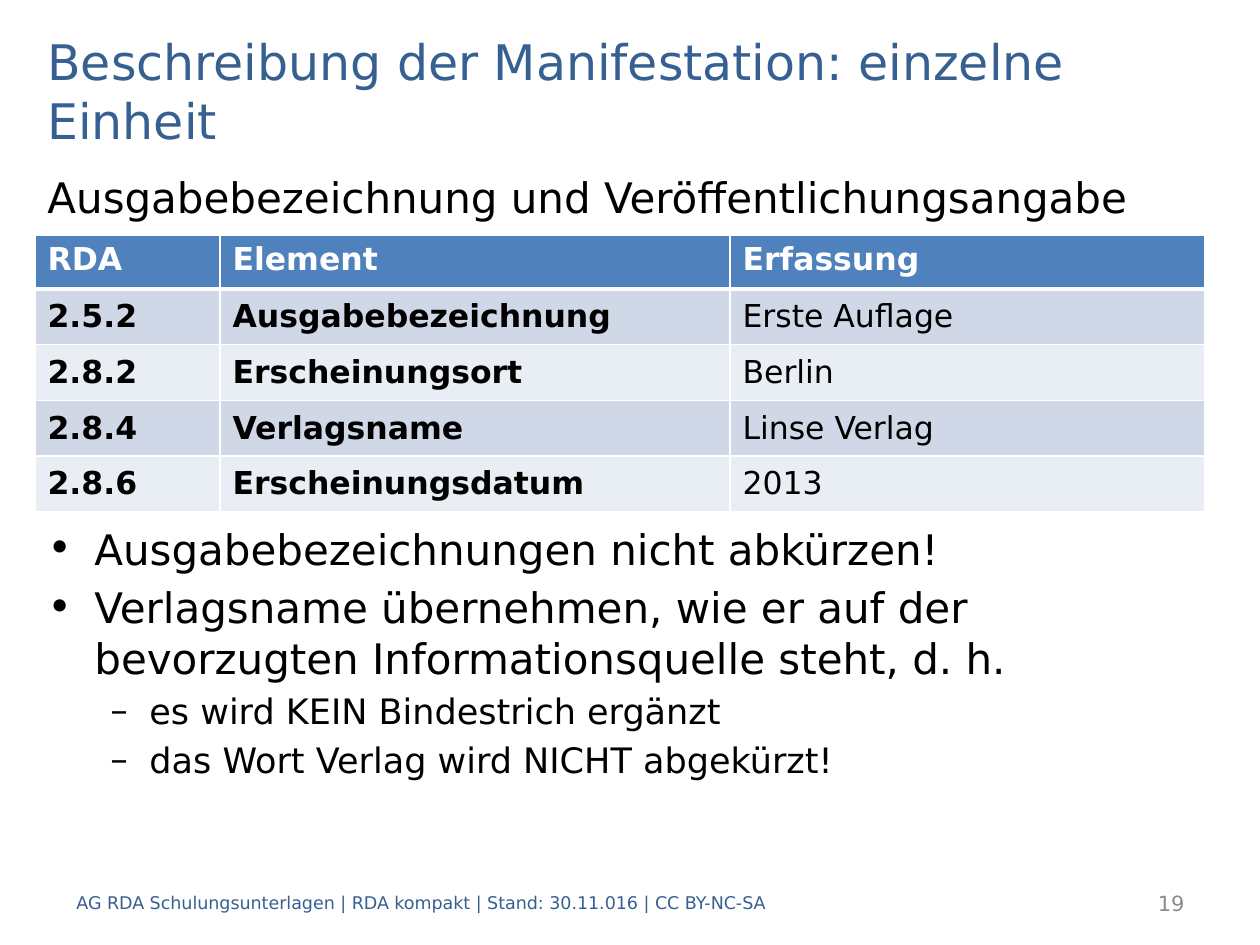
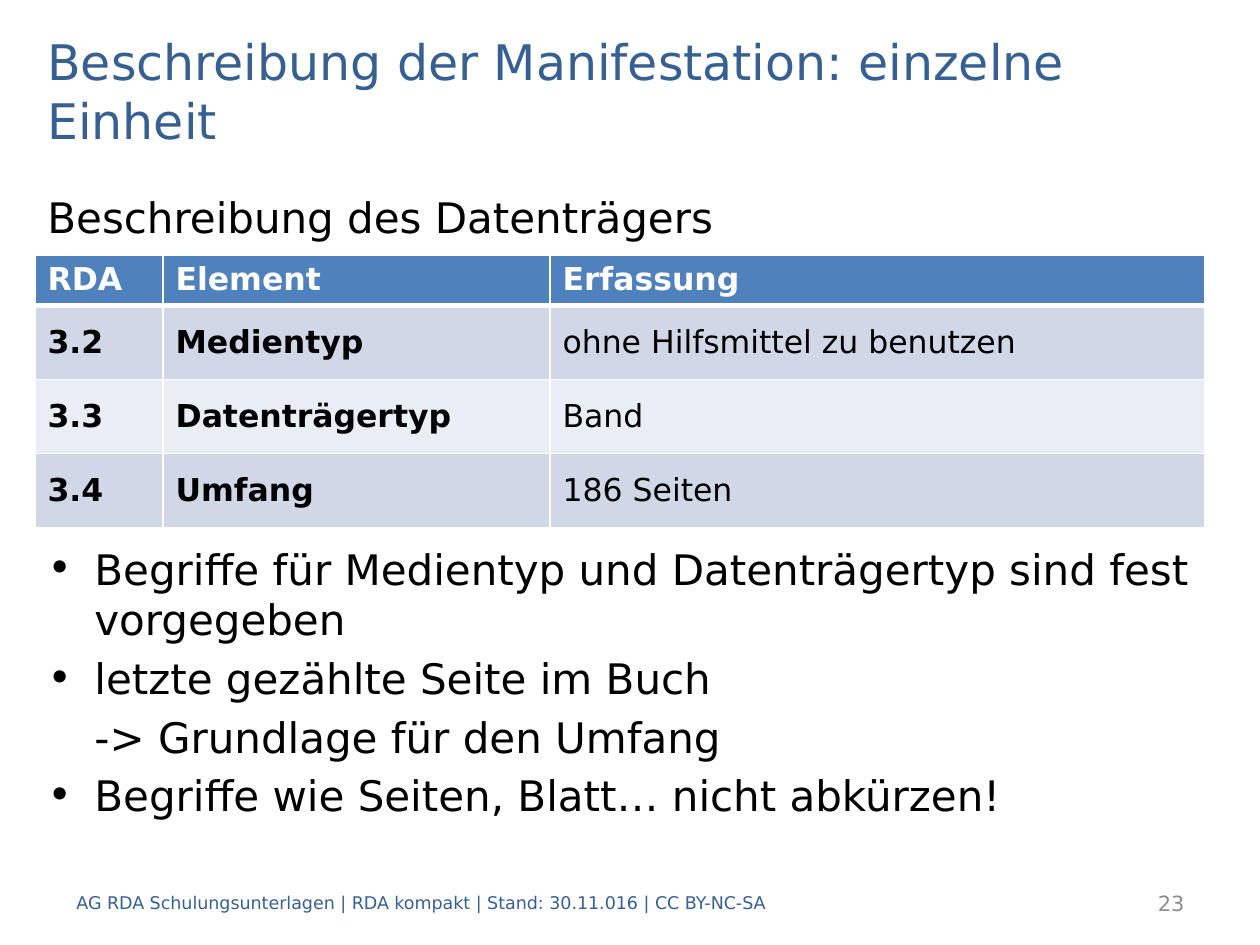
from lxml.etree import SubElement
from pptx import Presentation
from pptx.dml.color import RGBColor
from pptx.enum.text import MSO_ANCHOR, PP_ALIGN
from pptx.oxml.ns import qn
from pptx.util import Pt

PX = 914400 / 126  # EMU per px
FONT = "DejaVu Sans"
COLORS = {
    "title": "376092", "text": "000000", "number": "8C8C8C", "white": "FFFFFF",
    "header": "4F81BD", "odd_row": "D0D8E8", "even_row": "E9EDF4",
}
TITLE = "Beschreibung der Manifestation: einzelne Einheit"
FOOTER = "AG RDA Schulungsunterlagen | RDA kompakt | Stand: 30.11.016 | CC BY-NC-SA"
COLUMN_TITLES = ("RDA", "Element", "Erfassung")

# Shared boxes: left, top, width, height
TITLE_BOX = (35, 25, 1191, 130)
FOOTER_BOX = (64, 878, 1101, 50)
NUMBER_BOX = (997, 878, 200, 50)

# Kind of note: bullet, left margin, first-line indent, size
NOTE_STYLES = {
    "point": ("•", 47, -47, 24),
    "follow": (None, 47, 0, 24),
    "sub": ("–", 102, -39, 20),
}


def emu(px):
    return round(px * PX)


def color(name):
    return RGBColor.from_string(COLORS[name])


def add_run(paragraph, text, size, color_name, bold=False):
    run = paragraph.add_run()
    run.text = text
    run.font.name = FONT
    run.font.size = Pt(size)
    run.font.bold = bold
    run.font.color.rgb = color(color_name)


def add_frame(slide, box, anchor=MSO_ANCHOR.TOP):
    frame = slide.shapes.add_textbox(*map(emu, box)).text_frame
    frame.word_wrap = True
    frame.vertical_anchor = anchor
    return frame


def add_line(slide, box, text, size, color_name, align=PP_ALIGN.LEFT):
    paragraph = add_frame(slide, box, MSO_ANCHOR.MIDDLE).paragraphs[0]
    paragraph.alignment = align
    add_run(paragraph, text, size, color_name)


def add_title_and_footer(slide, number):
    add_line(slide, TITLE_BOX, TITLE, 28, "title")
    add_line(slide, NUMBER_BOX, str(number), 12, "number", PP_ALIGN.RIGHT)
    add_line(slide, FOOTER_BOX, FOOTER, 10, "title")


def set_borders(cell, top, bottom):
    """White cell borders; top and bottom widths in points."""
    properties = cell._tc.get_or_add_tcPr()
    for side, width in (("L", 1), ("R", 1), ("T", top), ("B", bottom)):
        border = SubElement(properties, qn(f"a:ln{side}"), w=str(Pt(width)))
        fill = SubElement(border, qn("a:solidFill"))
        SubElement(fill, qn("a:srgbClr"), val=COLORS["white"])


def add_elements_table(slide, box, columns, header_height, elements):
    left, top, width, height = box
    rows = [COLUMN_TITLES, *elements]
    table = slide.shapes.add_table(
        len(rows), len(columns), *map(emu, box)).table
    for column, column_width in zip(table.columns, columns):
        column.width = emu(column_width)
    row_height = (height - header_height) / len(elements)

    for r, texts in enumerate(rows):
        is_header = r == 0
        table.rows[r].height = emu(header_height if is_header else row_height)
        band = "header" if is_header else "odd_row" if r % 2 else "even_row"
        for c, text in enumerate(texts):
            cell = table.cell(r, c)
            set_borders(cell, 3 if r == 1 else 1, 3 if is_header else 1)
            cell.fill.solid()
            cell.fill.fore_color.rgb = color(band)
            if not is_header:
                cell.vertical_anchor = MSO_ANCHOR.MIDDLE
            add_run(cell.text_frame.paragraphs[0], text, 18,
                    "white" if is_header else "text", is_header or c < 2)


def add_notes(slide, box, notes):
    frame = add_frame(slide, box)
    for i, (kind, text) in enumerate(notes):
        bullet, margin, indent, size = NOTE_STYLES[kind]
        paragraph = frame.add_paragraph() if i else frame.paragraphs[0]
        paragraph.space_before = Pt(size * 0.2)
        properties = paragraph._p.get_or_add_pPr()
        properties.set("marL", str(emu(margin)))
        properties.set("indent", str(emu(indent)))
        if bullet:
            SubElement(properties, qn("a:buFont"), typeface=FONT)
            SubElement(properties, qn("a:buChar"), char=bullet)
        add_run(paragraph, text, size, "text")


def add_manifestation_slide(deck, number, top, heading, columns,
                            table_height, header_height, elements, notes):
    """Heading, table and notes stacked downwards from top."""
    slide = deck.slides.add_slide(deck.slide_layouts[6])
    left, width = 35, 1191

    # Heading
    paragraph = add_frame(slide, (left, top, width, 66)).paragraphs[0]
    paragraph.space_before = Pt(4.8)
    add_run(paragraph, heading, 24, "text")

    # Table and notes
    add_elements_table(slide, (left, top + 70, sum(columns), table_height),
                       columns, header_height, elements)
    add_notes(slide, (left, top + 352, width, 330), notes)
    add_title_and_footer(slide, number)


def main():
    deck = Presentation()
    deck.slide_width, deck.slide_height = emu(1260), emu(945)

    # Edition and publication statement
    add_manifestation_slide(
        deck, 19, 165, "Ausgabebezeichnung und Veröffentlichungsangabe",
        (185, 510, 475), 277, 54,
        [("2.5.2", "Ausgabebezeichnung", "Erste Auflage"),
         ("2.8.2", "Erscheinungsort", "Berlin"),
         ("2.8.4", "Verlagsname", "Linse Verlag"),
         ("2.8.6", "Erscheinungsdatum", "2013")],
        [("point", "Ausgabebezeichnungen nicht abkürzen!"),
         ("point", "Verlagsname übernehmen, wie er auf der bevorzugten "
                   "Informationsquelle steht, d. h."),
         ("sub", "es wird KEIN Bindestrich ergänzt"),
         ("sub", "das Wort Verlag wird NICHT abgekürzt!")])

    # Description of the carrier
    add_manifestation_slide(
        deck, 23, 185, "Beschreibung des Datenträgers",
        (128, 387, 655), 270, 48,
        [("3.2", "Medientyp", "ohne Hilfsmittel zu benutzen"),
         ("3.3", "Datenträgertyp", "Band"),
         ("3.4", "Umfang", "186 Seiten")],
        [("point", "Begriffe für Medientyp und Datenträgertyp sind fest "
                   "vorgegeben"),
         ("point", "letzte gezählte Seite im Buch"),
         ("follow", "-> Grundlage für den Umfang"),
         ("point", "Begriffe wie Seiten, Blatt… nicht abkürzen!")])

    deck.save("out.pptx")


if __name__ == "__main__":
    main()
